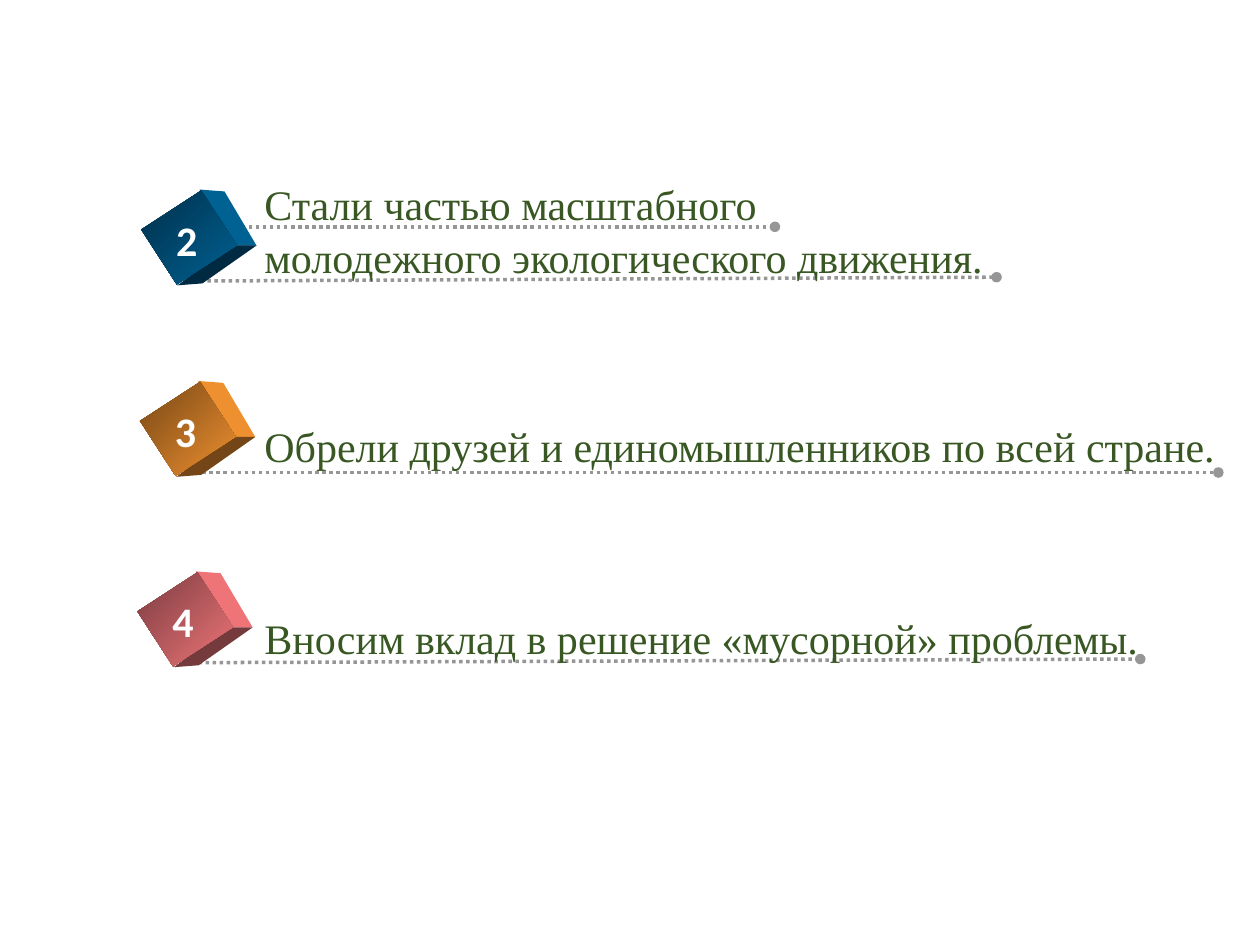
from dataclasses import dataclass

from lxml.etree import SubElement
from pptx import Presentation
from pptx.dml.color import RGBColor
from pptx.enum.dml import MSO_LINE
from pptx.enum.shapes import MSO_CONNECTOR, MSO_SHAPE
from pptx.enum.text import MSO_AUTO_SIZE
from pptx.oxml.ns import qn
from pptx.slide import Slide
from pptx.util import Pt

COLORS = {
    "text": "385723",
    "number": "FFFFFF",
    "line": "969696",
    "blue": ("00304A", "006193", "002A42"),
    "orange": ("774716", "EE902F", "744516"),
    "pink": ("7A3D40", "EE7478", "743A3C"),
}
CUBE_WIDTH, CUBE_HEIGHT, CUBE_ROTATION = 37.4, 41, 57
RIGHT_FACE = [(6, -27.4), (20.3, -26.3), (38.6, 4.6), (24.6, 4.6)]
BOTTOM_FACE = [(-6.6, 27.4), (24.6, 4.6), (38.6, 4.6), (7.7, 26.3)]
TEXT_LEFT = 144

ITEMS = [
    ("2", "blue", (89.3, 115.2), (97.2, 429, 65.5),
     "Стали частью масштабного \vмолодежного экологического движения.",
     [(118, 129.6, 442.8, 129.6), (114.5, 160.6, 569.5, 158.4)]),
    ("3", "orange", (88.6, 224.6), (235.4, 563.8, 36.7),
     "Обрели друзей и единомышленников по всей стране.",
     [(111.6, 270, 696.2, 270)]),
    ("4", "pink", (87.1, 333.4), (344.9, 519, 36.7),
     "Вносим вклад в решение «мусорной» проблемы.",
     [(109.4, 378.7, 651.6, 376.6)]),
]


@dataclass
class CubeList:
    """Draws numbered cubes, their captions and dotted rules on a slide."""

    slide: Slide
    text_font: str = "Times New Roman"
    number_font: str = "Calibri"
    size: float = 24

    def rule(self, *ends):
        connector = self.slide.shapes.add_connector(
            MSO_CONNECTOR.STRAIGHT, *map(Pt, ends))
        line = connector.line
        line.color.rgb = RGBColor.from_string(COLORS["line"])
        line.width = Pt(2)
        line.dash_style = MSO_LINE.ROUND_DOT
        properties = connector._element.spPr
        SubElement(properties.find(qn("a:ln")), qn("a:tailEnd"), type="oval")
        SubElement(properties, qn("a:effectLst"))

    def face(self, center, offsets, color):
        points = [(Pt(center[0] + x), Pt(center[1] + y)) for x, y in offsets]
        builder = self.slide.shapes.build_freeform(*points[0])
        builder.add_line_segments(points[1:])
        shape = builder.convert_to_shape()
        shape.shadow.inherit = False
        shape.fill.solid()
        shape.fill.fore_color.rgb = RGBColor.from_string(color)
        shape.line.fill.background()

    def cube(self, left, top, colors):
        dark, light, under = colors
        center = left + CUBE_WIDTH / 2, top + CUBE_HEIGHT / 2
        self.face(center, RIGHT_FACE, light)
        self.face(center, BOTTOM_FACE, under)
        front = self.slide.shapes.add_shape(
            MSO_SHAPE.RECTANGLE, Pt(left), Pt(top), Pt(CUBE_WIDTH), Pt(CUBE_HEIGHT))
        front.rotation = CUBE_ROTATION
        front.shadow.inherit = False
        front.line.fill.background()
        front.fill.gradient()
        front.fill.gradient_angle = 12
        for stop, color in zip(front.fill.gradient_stops, (dark, light)):
            stop.color.rgb = RGBColor.from_string(color)

    def text(self, left, top, width, height, words, font, color, bold=False, spacing=1):
        shape = self.slide.shapes.add_textbox(*map(Pt, (left, top, width, height)))
        frame = shape.text_frame
        frame.word_wrap = False
        frame.auto_size = MSO_AUTO_SIZE.SHAPE_TO_FIT_TEXT
        paragraph = frame.paragraphs[0]
        paragraph.text = words
        paragraph.line_spacing = spacing
        paragraph.font.name = font
        paragraph.font.size = Pt(self.size)
        paragraph.font.bold = bold
        paragraph.font.color.rgb = RGBColor.from_string(COLORS[color])

    def item(self, number, color, corner, caption, words, rules):
        left, top = corner
        for ends in rules:
            self.rule(*ends)
        self.cube(left, top, COLORS[color])
        self.text(TEXT_LEFT, *caption, words, self.text_font, "text", spacing=1.05)
        self.text(left + 4.3, top + 3.6, 28.1, 36, number,
                  self.number_font, "number", bold=True)


def main():
    presentation = Presentation()
    presentation.slide_width, presentation.slide_height = Pt(720), Pt(540)
    slide = presentation.slides.add_slide(presentation.slide_layouts[6])
    cube_list = CubeList(slide)
    for item in ITEMS:
        cube_list.item(*item)
    presentation.save("out.pptx")


if __name__ == "__main__":
    main()
